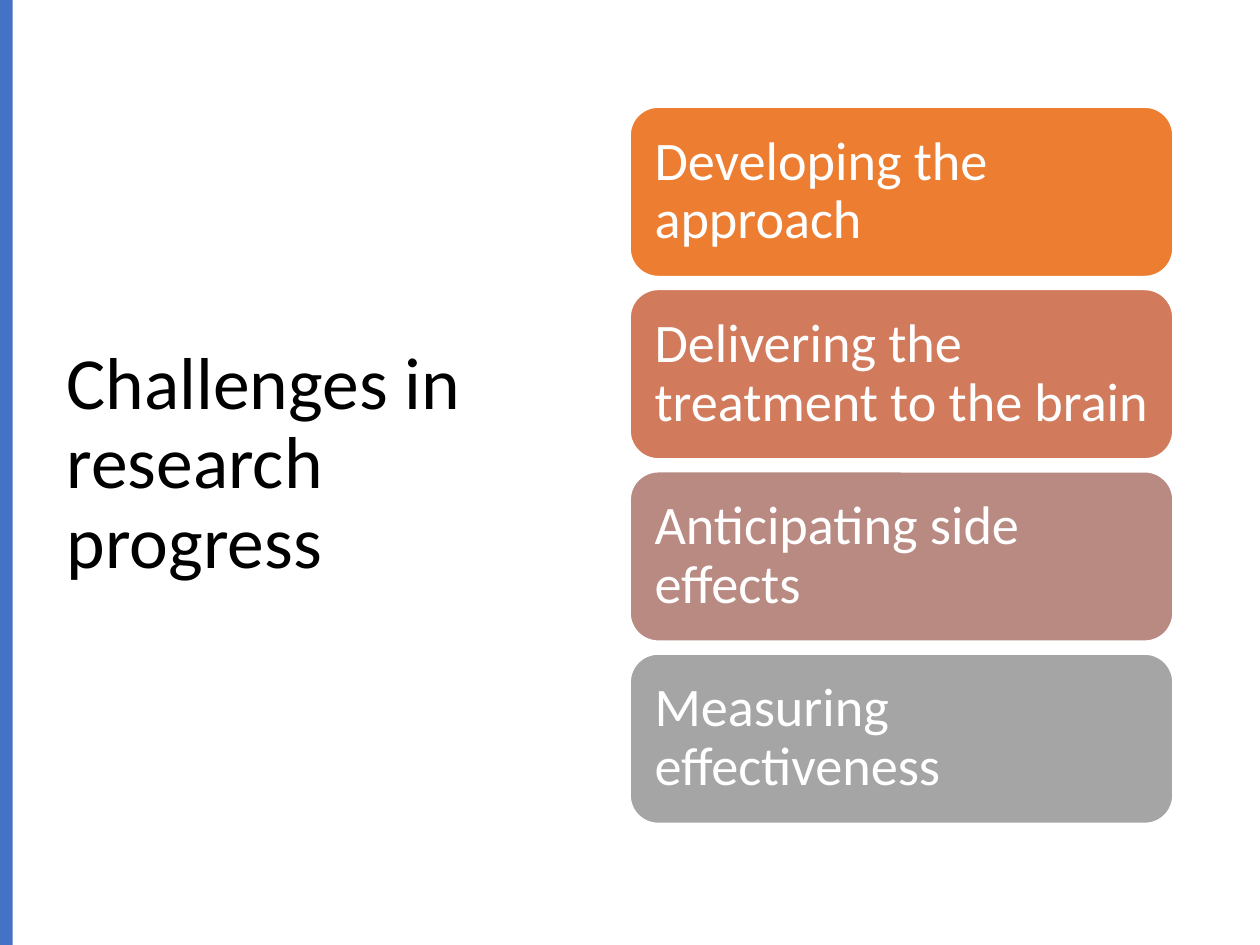
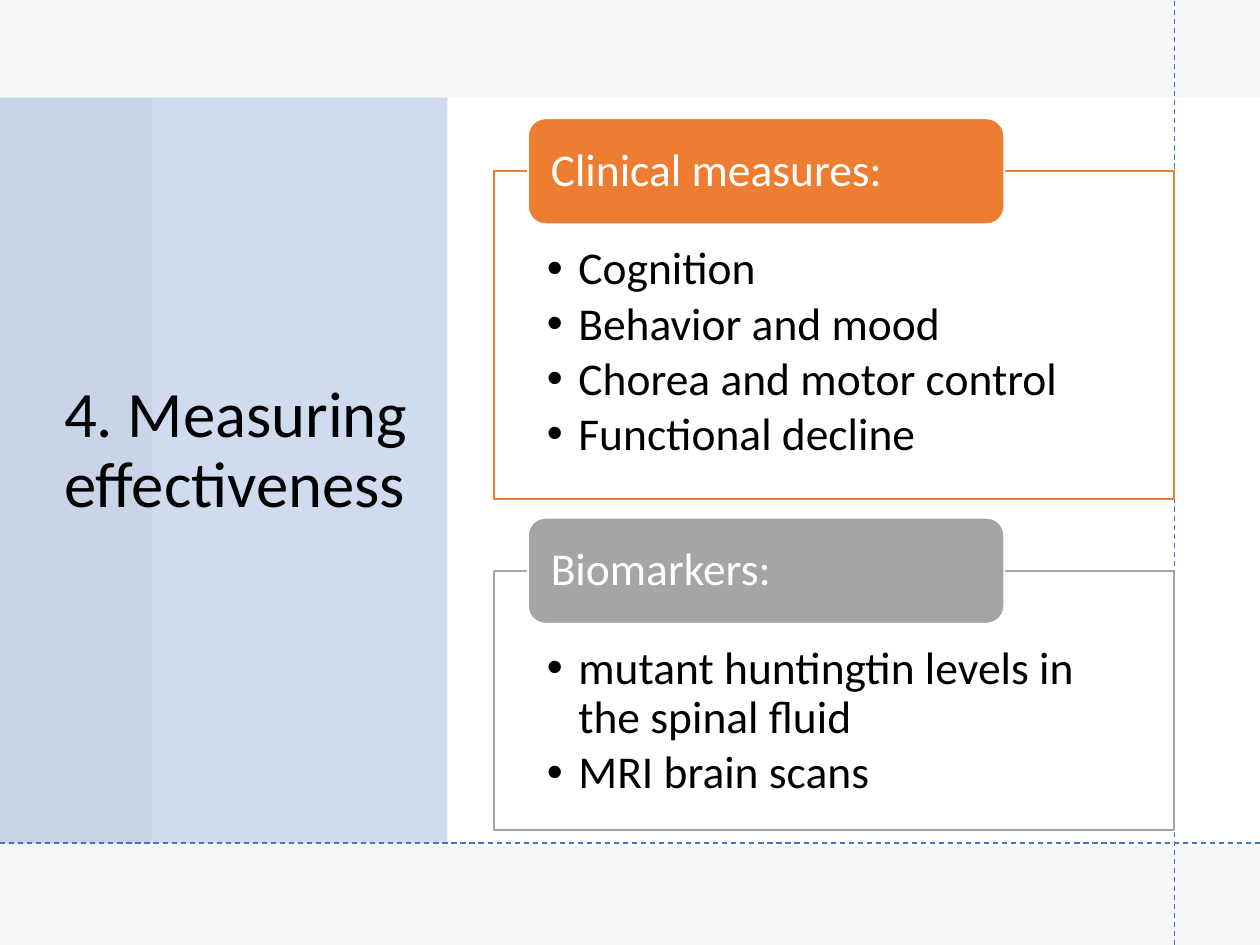
from lxml.etree import SubElement
from pptx import Presentation
from pptx.dml.color import RGBColor
from pptx.enum.dml import MSO_LINE
from pptx.enum.shapes import MSO_CONNECTOR, MSO_SHAPE
from pptx.enum.text import MSO_ANCHOR, MSO_AUTO_SIZE, PP_ALIGN
from pptx.oxml.ns import qn
from pptx.util import Inches, Pt

BLACK = RGBColor(0x00, 0x00, 0x00)
WHITE = RGBColor(0xFF, 0xFF, 0xFF)
GREY = RGBColor(0xE7, 0xE6, 0xE6)
BLUE = RGBColor(0x44, 0x72, 0xC4)
ORANGE = RGBColor(0xED, 0x7D, 0x31)
CORAL = RGBColor(0xD1, 0x7B, 0x5C)
ROSE = RGBColor(0xB9, 0x8A, 0x82)
SILVER = RGBColor(0xA5, 0xA5, 0xA5)

TITLE_ONLY, TWO_CONTENT = 5, 3


def set_all(obj, **values):
    for name, value in values.items():
        setattr(obj, name, value)


class Deck:
    """Holds the style and the current slide; places are percent of the slide size."""

    font = "Calibri"
    line_spacing = 0.9

    def __init__(self):
        self.prs = Presentation()
        set_all(self.prs, slide_width=Inches(10), slide_height=Inches(7.5))

    def new_slide(self, layout):
        self.s = self.prs.slides.add_slide(self.prs.slide_layouts[layout])

    def place(self, x, y, w, h):
        width, height = self.prs.slide_width, self.prs.slide_height
        return [round(size * share / 100) for size, share in
                zip((width, height, width, height), (x, y, w, h))]

    def move(self, sp, box):
        """Move a placeholder to a box and in front of what is already drawn."""
        sp.left, sp.top, sp.width, sp.height = self.place(*box)
        self.s.shapes._spTree.append(sp._element)

    def paint(self, sp, fill, opacity=100, line=None):
        sp.fill.solid()
        sp.fill.fore_color.rgb = fill
        if opacity < 100:
            color = sp._element.spPr.find(qn("a:solidFill"))[0]
            SubElement(color, qn("a:alpha"), val=str(opacity * 1000))
        if line is None:
            sp.line.fill.background()
        else:
            sp.line.color.rgb = line
            sp.line.width = Pt(1)

    def fill_text(self, sp, lines, size, color, anchor=MSO_ANCHOR.MIDDLE,
                  insets=(0.1, 0.05, 0.1, 0.05), bullets=False):
        tf = sp.text_frame
        left, top, right, bottom = map(Inches, insets)
        set_all(tf, word_wrap=True, auto_size=MSO_AUTO_SIZE.NONE, vertical_anchor=anchor,
                margin_left=left, margin_top=top, margin_right=right, margin_bottom=bottom)
        for i, line in enumerate(lines):
            p = tf.add_paragraph() if i else tf.paragraphs[0]
            if bullets:
                self.add_bullet(p)
            set_all(p, alignment=PP_ALIGN.LEFT, line_spacing=self.line_spacing,
                    space_before=Pt(0), space_after=Pt(3.5 if bullets else 0))
            r = p.add_run()
            r.text = line
            set_all(r.font, name=self.font, size=Pt(size))
            r.font.color.rgb = color

    def add_bullet(self, p):
        pPr = p._p.get_or_add_pPr()
        pPr.set("marL", str(Inches(0.25)))
        pPr.set("indent", str(-Inches(0.25)))
        SubElement(pPr, qn("a:buFont"), typeface="Arial")
        SubElement(pPr, qn("a:buChar"), char="•")

    def title(self, text, box, size):
        sp = self.s.shapes.title
        self.move(sp, box)
        self.fill_text(sp, [text], size, BLACK)

    def panel(self, box, fill, opacity=100, line=None, kind=MSO_SHAPE.RECTANGLE):
        sp = self.s.shapes.add_shape(kind, *self.place(*box))
        sp.shadow.inherit = False
        self.paint(sp, fill, opacity, line)
        return sp

    def card(self, text, box, fill, size, insets):
        sp = self.panel(box, fill, line=WHITE, kind=MSO_SHAPE.ROUNDED_RECTANGLE)
        self.fill_text(sp, [text], size, WHITE, insets=insets)

    def framed_list(self, idx, items, box, line):
        sp = self.s.placeholders[idx]
        self.move(sp, box)
        self.paint(sp, WHITE, 90, line)
        self.fill_text(sp, items, 26, BLACK, MSO_ANCHOR.TOP, (0.42, 0.59, 0.42, 0.2),
                       bullets=True)

    def guide(self, x1, y1, x2, y2):
        ends = self.place(x1, y1, x2, y2)
        line = self.s.shapes.add_connector(MSO_CONNECTOR.STRAIGHT, *ends)
        set_all(line.line, width=Pt(0.75), dash_style=MSO_LINE.DASH)
        line.line.color.rgb = BLUE
        SubElement(line._element.spPr, qn("a:effectLst"))


def challenges(deck):
    deck.new_slide(TITLE_ONLY)
    deck.title("Challenges in research progress", (4.3, 9.07, 42.5, 80.27), 42)
    deck.panel((0, 0, 1, 100), BLUE)
    cards = (("Developing the approach", ORANGE),
             ("Delivering the treatment to the brain", CORAL),
             ("Anticipating side effects", ROSE),
             ("Measuring effectiveness", SILVER))
    top, pitch, height = 11.33, 19.29, 17.95
    for i, (text, fill) in enumerate(cards):
        deck.card(text, (50, top + i * pitch, 43.1, height), fill, 31,
                  (0.13, 0.13, 0.12, 0.13))


def measures(deck):
    deck.new_slide(TWO_CONTENT)
    full = (0, 0, 100, 100)
    deck.panel(full, WHITE)
    deck.panel(full, GREY, 35)
    deck.panel((12.1, 10.33, 87.9, 79.2), WHITE)
    deck.panel((0, 10.33, 35.5, 78.93), BLUE, 25)
    deck.title("4. Measuring effectiveness", (4.1, 9.87, 29.6, 75.87), 37)
    right, bottom = 93.2, 89.2
    deck.guide(right, 100, right, 0)
    deck.guide(0, bottom, 100, bottom)

    groups = (("Clinical measures:", ORANGE, 18.13, 34.67,
               ("Cognition", "Behavior and mood", "Chorea and motor control",
                "Functional decline")),
              ("Biomarkers:", SILVER, 60.4, 27.47,
               ("mutant huntingtin levels in the spinal fluid", "MRI brain scans")))
    left, tag_height = 39.2, 11.2
    for idx, (heading, color, top, height, items) in enumerate(groups, start=1):
        deck.framed_list(idx, items, (left, top, right - left, height), color)
        deck.card(heading, (left + 2.7, top - tag_height / 2, 37.8, tag_height), color, 26,
                  (0.14, 0, 0.14, 0))


def main():
    deck = Deck()
    challenges(deck)
    measures(deck)
    deck.prs.save("out.pptx")


if __name__ == "__main__":
    main()
